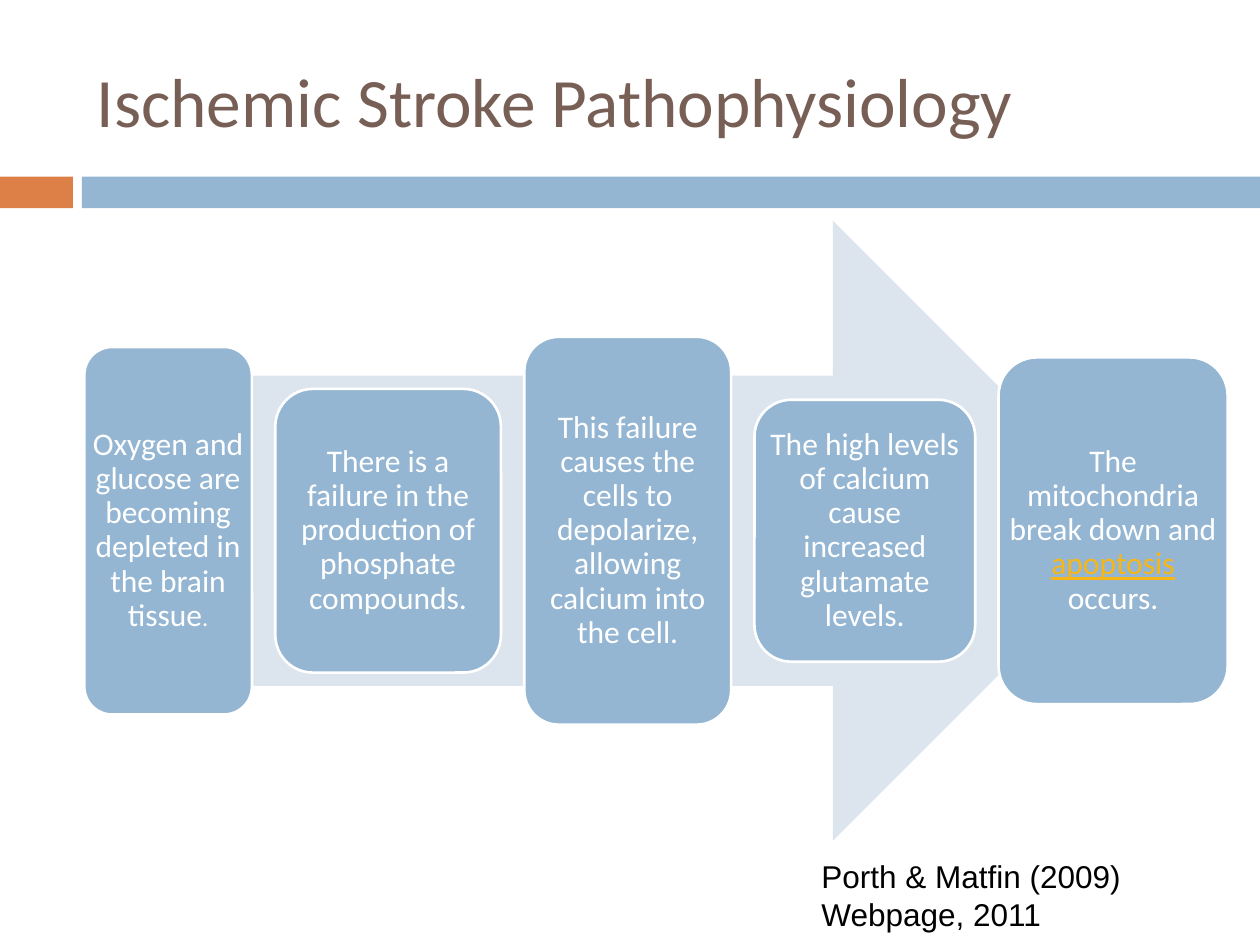
from pptx import Presentation
from pptx.dml.color import RGBColor
from pptx.enum.shapes import MSO_SHAPE
from pptx.enum.text import MSO_ANCHOR, PP_ALIGN
from pptx.util import Cm, Pt

WHITE, BLUE, ORANGE, PALE = "FFFFFF", "94B6D2", "DD8047", "DCE5EE"
BROWN, GOLD, BLACK = "775F55", "F7B615", "000000"
MIDDLE, FIRST_LEFT, STEP_GAP = 10.7, 1.7, 0.47

STEPS = [
    (3.38, 7.41, [("Oxygen and glucose are becoming depleted in the brain tissue", {}),
                  (".", {"size": 14})]),
    (4.55, 5.72, [("There is a failure in the production of phosphate compounds.", {})]),
    (4.17, 7.82, [("This failure causes the cells to depolarize, allowing calcium "
                   "into the cell.", {})]),
    (4.45, 5.28, [("The high levels of calcium cause increased glutamate levels.", {})]),
    (4.62, 6.99, [("The mitochondria break down and ", {}),
                  ("apoptosis", {"color": GOLD, "underline": True}),
                  (" occurs.", {})]),
]


def rgb(value):
    """Turn a hex string into a colour."""
    return RGBColor.from_string(value)


def add_span(para, text, size=18, font="Calibri", color=WHITE, underline=None):
    """Append one formatted run to a paragraph."""
    span = para.add_run()
    span.text = text
    span.font.size = Pt(size)
    span.font.name = font
    span.font.color.rgb = rgb(color)
    span.font.underline = underline


def add_block(page, kind, left, top, width, height, fill, line=None):
    """Add a filled preset shape with an optional outline."""
    block = page.shapes.add_shape(kind, Cm(left), Cm(top), Cm(width), Cm(height))
    block.shadow.inherit = False
    block.fill.solid()
    block.fill.fore_color.rgb = rgb(fill)
    if line:
        block.line.color.rgb = rgb(line)
        block.line.width = Pt(1.5)
    else:
        block.line.fill.background()
    return block


def add_text(page, left, top, width, height, lines, anchor=MSO_ANCHOR.TOP, **style):
    """Add a wrapping text box with one paragraph per line."""
    box = page.shapes.add_textbox(Cm(left), Cm(top), Cm(width), Cm(height))
    frame = box.text_frame
    frame.word_wrap = True
    frame.vertical_anchor = anchor
    for index, line in enumerate(lines):
        para = frame.add_paragraph() if index else frame.paragraphs[0]
        add_span(para, line, **style)


def add_step(page, left, width, height, spans):
    """Add a rounded step, centred on the arrow, with its text."""
    step = add_block(page, MSO_SHAPE.ROUNDED_RECTANGLE, left, MIDDLE - height / 2,
                     width, height, BLUE, line=WHITE)
    frame = step.text_frame
    frame.word_wrap = True
    frame.vertical_anchor = MSO_ANCHOR.MIDDLE
    frame.margin_left = frame.margin_right = frame.margin_top = frame.margin_bottom = 0
    para = frame.paragraphs[0]
    para.alignment = PP_ALIGN.CENTER
    para.line_spacing = 0.9
    for text, style in spans:
        add_span(para, text, **style)


def main():
    """Build the slide and save the deck."""
    deck = Presentation()
    deck.slide_width, deck.slide_height = Cm(25.4), Cm(19.05)
    page = deck.slides.add_slide(deck.slide_layouts[6])
    add_block(page, MSO_SHAPE.RECTANGLE, 0, 3.56, 1.47, 0.64, ORANGE)
    add_block(page, MSO_SHAPE.RECTANGLE, 1.65, 3.56, 23.75, 0.64, BLUE)
    add_text(page, 1.7, 0.64, 23.28, 2.74, ["Ischemic Stroke Pathophysiology"],
             anchor=MSO_ANCHOR.MIDDLE, size=39.6, color=BROWN)
    add_block(page, MSO_SHAPE.RIGHT_ARROW, 3.43, MIDDLE - 6.25, 19.61, 12.5, PALE)
    left = FIRST_LEFT
    for width, height, spans in STEPS:
        add_step(page, left, width, height, spans)
        left += width + STEP_GAP
    add_text(page, 16.31, 17.15, 8.46, 1.8, ["Porth & Matfin (2009)", "Webpage, 2011"],
             font="Arial", color=BLACK)
    deck.save("out.pptx")


if __name__ == "__main__":
    main()
